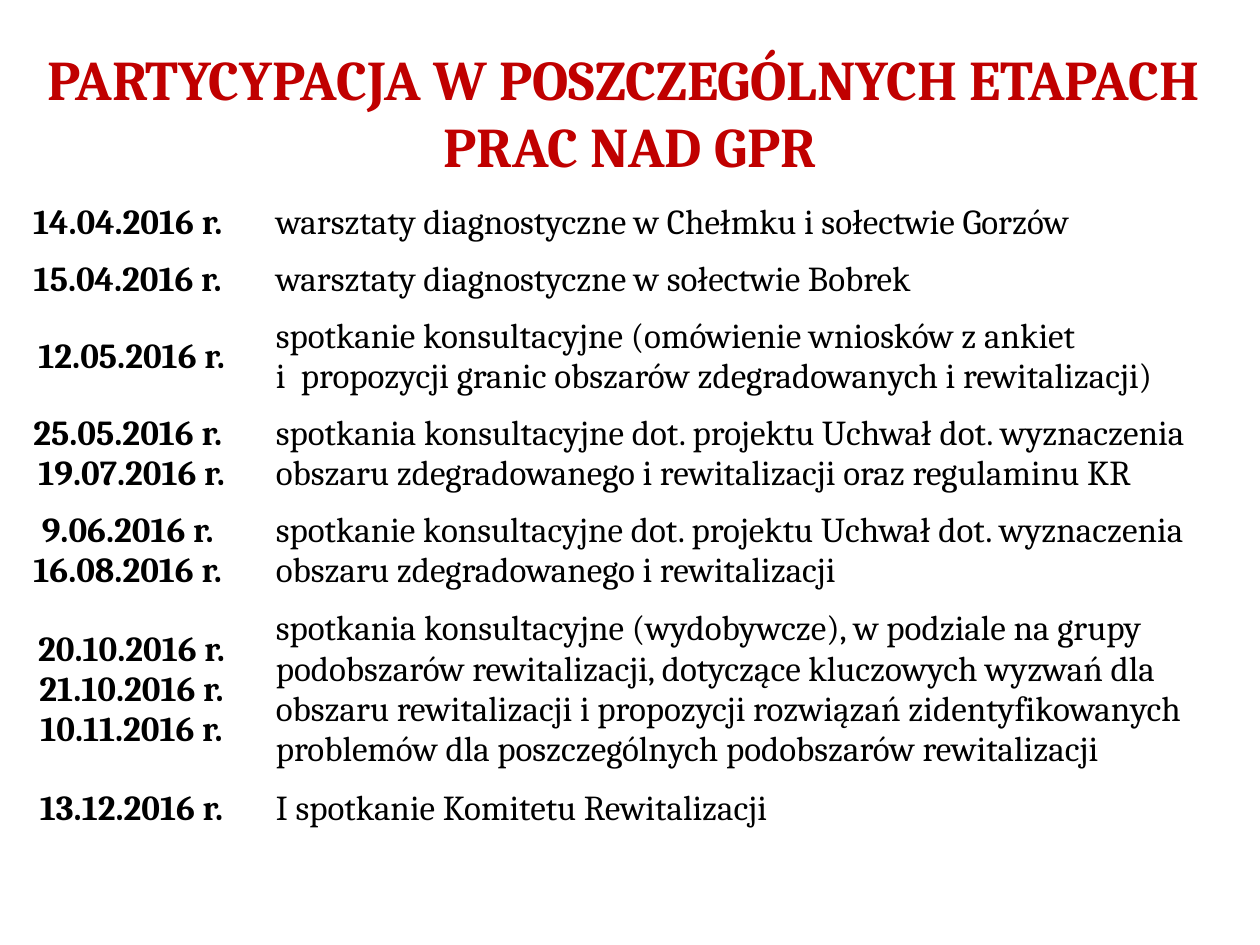
from pptx import Presentation, util as u
from pptx.dml import color
from pptx.enum import text

THEME = {
    "font": "Cambria",
    "title": {"size": u.Pt(32), "color": color.RGBColor(0xC0, 0x00, 0x00)},
    "body": {"size": u.Pt(20), "color": color.RGBColor(0x00, 0x00, 0x00)},
}


def format_text(frame, role, bold, align):
    """Give every paragraph of a text frame the look of its role."""
    look = {"name": THEME["font"], "size": THEME[role]["size"], "bold": bold}
    for paragraph in frame.paragraphs:
        paragraph.alignment = align
        for run in paragraph.runs:
            for key, value in look.items():
                setattr(run.font, key, value)
            run.font.color.rgb = THEME[role]["color"]


prs = Presentation()
prs.slide_width, prs.slide_height = u.Inches(10), u.Inches(7.5)
slide = prs.slides.add_slide(prs.slide_layouts[6])

# Title
title = slide.shapes.add_textbox(
    u.Inches(0), u.Inches(-0.11), u.Inches(10), u.Inches(1.58)).text_frame
title.word_wrap = True
title.vertical_anchor = text.MSO_ANCHOR.BOTTOM
title.text = "PARTYCYPACJA W POSZCZEGÓLNYCH ETAPACH \nPRAC NAD GPR"
format_text(title, "title", True, text.PP_ALIGN.CENTER)

# Meetings: row height, dates, subject
ONE_LINE, TWO_LINES, FOUR_LINES = 0.45, 0.77, 1.43
meetings = [
    (ONE_LINE, "14.04.2016 r. ",
     "warsztaty diagnostyczne w Chełmku i sołectwie Gorzów"),
    (ONE_LINE, "15.04.2016 r. ",
     "warsztaty diagnostyczne w sołectwie Bobrek"),
    (TWO_LINES, "12.05.2016 r.",
     "spotkanie konsultacyjne (omówienie wniosków z ankiet\n"
     "i  propozycji granic obszarów zdegradowanych i rewitalizacji)"),
    (TWO_LINES, "25.05.2016 r. \n19.07.2016 r.",
     "spotkania konsultacyjne dot. projektu Uchwał dot. wyznaczenia "
     "obszaru zdegradowanego i rewitalizacji oraz regulaminu KR"),
    (TWO_LINES, "9.06.2016 r. \v16.08.2016 r. ",
     "spotkanie konsultacyjne dot. projektu Uchwał dot. wyznaczenia "
     "obszaru zdegradowanego i rewitalizacji"),
    (FOUR_LINES, "20.10.2016 r. 21.10.2016 r. 10.11.2016 r.",
     "spotkania konsultacyjne (wydobywcze), w podziale na grupy "
     "podobszarów rewitalizacji, dotyczące kluczowych wyzwań dla "
     "obszaru rewitalizacji i propozycji rozwiązań zidentyfikowanych "
     "problemów dla poszczególnych podobszarów rewitalizacji"),
    (ONE_LINE, "13.12.2016 r.", "I spotkanie Komitetu Rewitalizacji"),
]

# Schedule table: bold centred dates, plain left-aligned subjects
schedule = slide.shapes.add_table(
    len(meetings), 2, u.Inches(0), u.Inches(1.55), u.Inches(10),
    u.Inches(sum(height for height, *_ in meetings))).table
schedule.first_row = schedule.horz_banding = False
columns = [(2.09, True, text.PP_ALIGN.CENTER), (7.91, False, text.PP_ALIGN.LEFT)]
for column, (width, *_) in zip(schedule.columns, columns):
    column.width = u.Inches(width)

for row, (height, *contents) in zip(schedule.rows, meetings):
    row.height = u.Inches(height)
    for cell, content, (_, bold, align) in zip(row.cells, contents, columns):
        cell.fill.background()
        cell.vertical_anchor = text.MSO_ANCHOR.MIDDLE
        cell.text_frame.text = content
        format_text(cell.text_frame, "body", bold, align)

prs.save("out.pptx")
